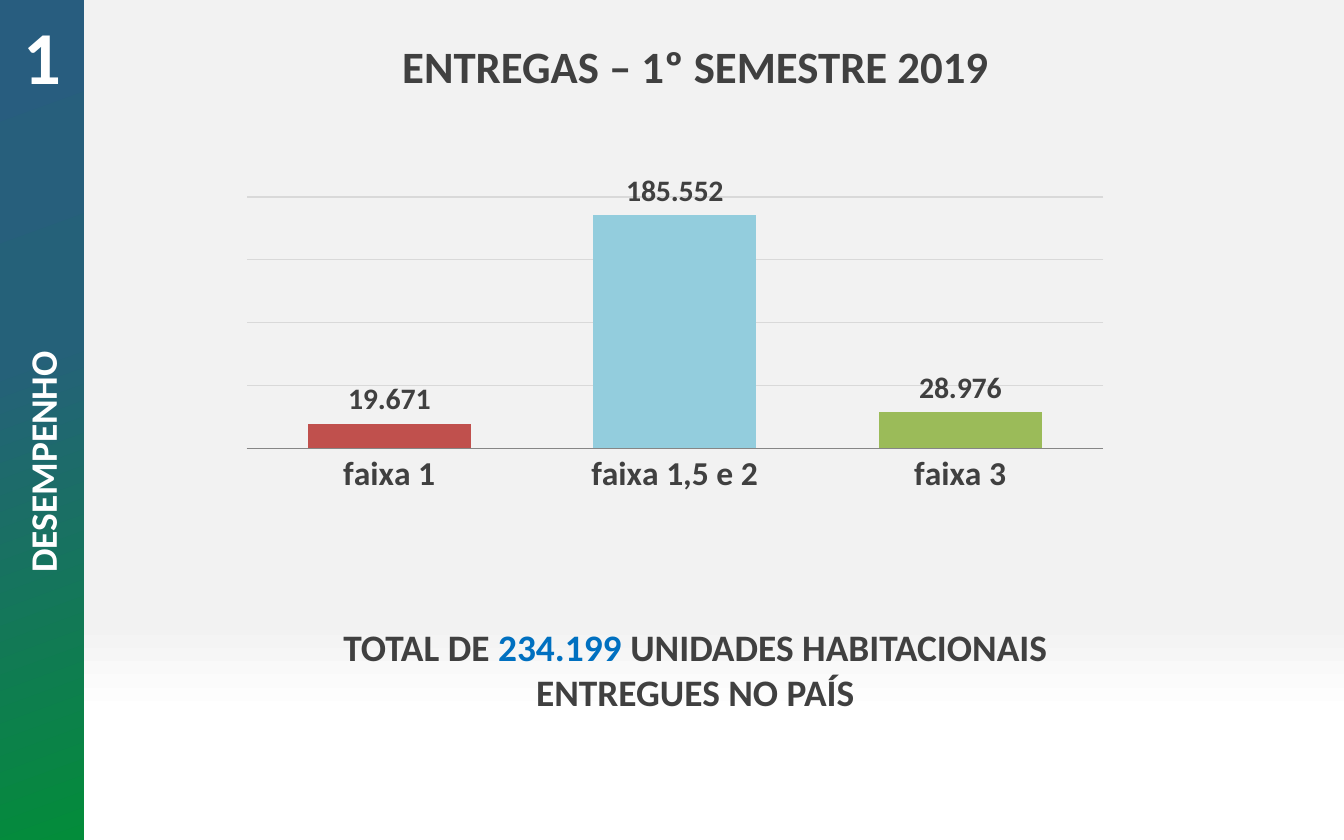
from pptx import Presentation
from pptx.chart.data import CategoryChartData
from pptx.dml.color import RGBColor
from pptx.enum.chart import XL_CHART_TYPE, XL_LABEL_POSITION, XL_TICK_LABEL_POSITION, XL_TICK_MARK
from pptx.enum.shapes import MSO_SHAPE
from pptx.enum.text import MSO_ANCHOR, MSO_AUTO_SIZE, PP_ALIGN
from pptx.oxml import parse_xml
from pptx.oxml.ns import nsdecls, qn
from pptx.util import Pt

FONT = "Calibri"
WHITE, DARK, BLUE = "FFFFFF", "404040", "0070C0"
DELIVERIES = [  # category, units, bar colour
    ("faixa 1", 19671, "C0504D"),
    ("faixa 1,5 e 2", 185552, "93CDDD"),
    ("faixa 3", 28976, "9BBB59"),
]


def color(value):
    return RGBColor.from_string(value)


def set_font(font, size, value):
    font.name, font.size, font.bold = FONT, Pt(size), True
    font.color.rgb = color(value)


def set_gradient(fill, element, stops, angle):
    fill.gradient()
    fill.gradient_angle = 360 - angle
    stop_list = element.find(".//" + qn("a:gsLst"))
    for stop in list(stop_list):
        stop_list.remove(stop)
    for position, value in stops:
        stop_list.append(parse_xml(
            f'<a:gs {nsdecls("a")} pos="{position * 1000}">'
            f'<a:srgbClr val="{value}"/></a:gs>'))


def write_text(shape, box, lines, size, value):
    """Place a shape and fill it with lines of (text, colour or None) runs."""
    shape.left, shape.top, shape.width, shape.height = map(Pt, box)
    frame = shape.text_frame
    frame.word_wrap = True
    frame.auto_size = MSO_AUTO_SIZE.NONE
    frame.vertical_anchor = MSO_ANCHOR.MIDDLE
    for index, line in enumerate(lines):
        paragraph = frame.add_paragraph() if index else frame.paragraphs[0]
        paragraph.alignment = PP_ALIGN.CENTER
        set_font(paragraph.font, size, value)
        for text, highlight in line:
            run = paragraph.add_run()
            run.text = text
            if highlight:
                run.font.color.rgb = color(highlight)


def add_text(slide, box, lines, size, value):
    shape = slide.shapes.add_textbox(*map(Pt, box))
    write_text(shape, box, lines, size, value)
    return shape


def add_sidebar(slide, left, top, width, height):
    band = slide.shapes.add_shape(
        MSO_SHAPE.RECTANGLE, Pt(left), Pt(top), Pt(width), Pt(height))
    band.shadow.inherit = False
    band.line.fill.background()
    set_gradient(band.fill, band.element,
                 [(0, "285D7F"), (42, "256179"), (100, "038C3A")], 70)

    # Section name, turned about its centre
    length, depth = 381, 31
    section_box = (left + (width - length) / 2, top + 232, length, depth)
    section = add_text(slide, section_box, [[("DESEMPENHO", None)]], 20, WHITE)
    section.rotation = 270

    # Section number
    add_text(slide, (left, top, width, 59), [[("1", None)]], 40, WHITE)


def add_deliveries_chart(slide, left, top, width, height):
    data = CategoryChartData()
    data.categories = [category for category, _, _ in DELIVERIES]
    data.add_series("Series 1", [units for _, units, _ in DELIVERIES])
    chart = slide.shapes.add_chart(
        XL_CHART_TYPE.COLUMN_CLUSTERED,
        Pt(left), Pt(top), Pt(width), Pt(height), data).chart
    chart.has_legend = chart.has_title = False
    chart.font.name, chart.font.size = FONT, Pt(10)
    chart.font.color.rgb = color("000000")

    # Axes
    category_axis = chart.category_axis
    category_axis.major_tick_mark = XL_TICK_MARK.NONE
    category_axis.format.line.color.rgb = color("868686")
    set_font(category_axis.tick_labels.font, 18, DARK)
    value_axis = chart.value_axis
    value_axis.minimum_scale, value_axis.maximum_scale = 0, 200000
    value_axis.major_unit = 50000
    value_axis.tick_label_position = XL_TICK_LABEL_POSITION.NONE
    value_axis.visible = False
    grid_line = value_axis.major_gridlines.format.line
    grid_line.color.rgb, grid_line.width = color("D9D9D9"), Pt(0.75)

    # Bars and labels
    plot = chart.plots[0]
    plot.gap_width = 75
    plot.vary_by_categories = False
    series = plot.series[0]
    labels = series.data_labels
    labels.show_value = True
    labels.position = XL_LABEL_POSITION.OUTSIDE_END
    set_font(labels.font, 16, DARK)
    for index, (_, units, bar_color) in enumerate(DELIVERIES):
        point = series.points[index]
        point.format.fill.solid()
        point.format.fill.fore_color.rgb = color(bar_color)
        label = point.data_label
        label.position = XL_LABEL_POSITION.OUTSIDE_END
        paragraph = label.text_frame.paragraphs[0]
        run = paragraph.add_run()
        run.text = f"{units:,}".replace(",", ".")
        set_font(run.font, 16, DARK)

    # Fixed plot area, as shares of the chart
    plot_area = chart.element.find(".//" + qn("c:plotArea"))
    old_layout = plot_area.find(qn("c:layout"))
    if old_layout is not None:
        plot_area.remove(old_layout)
    shares = {"x": 0.02, "y": 0.06, "w": 0.96, "h": 0.69}
    sizes = "".join(f'<c:{name} val="{share}"/>' for name, share in shares.items())
    plot_area.insert(0, parse_xml(
        f'<c:layout {nsdecls("c")}><c:manualLayout><c:layoutTarget val="inner"/>'
        f'<c:xMode val="edge"/><c:yMode val="edge"/>{sizes}'
        '</c:manualLayout></c:layout>'))


def main():
    presentation = Presentation()
    presentation.slide_width, presentation.slide_height = Pt(720), Pt(450)
    slide = presentation.slides.add_slide(presentation.slide_layouts[5])
    set_gradient(slide.background.fill, slide.element,
                 [(0, "F2F2F2"), (74, "F2F2F2"), (85, WHITE), (100, WHITE)], 90)

    add_sidebar(slide, 0, 0, 45, 450)
    write_text(slide.shapes.title, (110, 17, 525, 36),
               [[("ENTREGAS – 1º SEMESTRE 2019", None)]], 24, DARK)
    add_deliveries_chart(slide, 122.5, 93, 478, 196)

    # Total
    total = f"{sum(units for _, units, _ in DELIVERIES):,}".replace(",", ".")
    add_text(slide, (175, 330.5, 395, 55.5), [
        [("TOTAL DE ", None), (total, BLUE), (" UNIDADES HABITACIONAIS", None)],
        [("ENTREGUES NO PAÍS", None)],
    ], 20, DARK)

    presentation.save("out.pptx")


if __name__ == "__main__":
    main()
